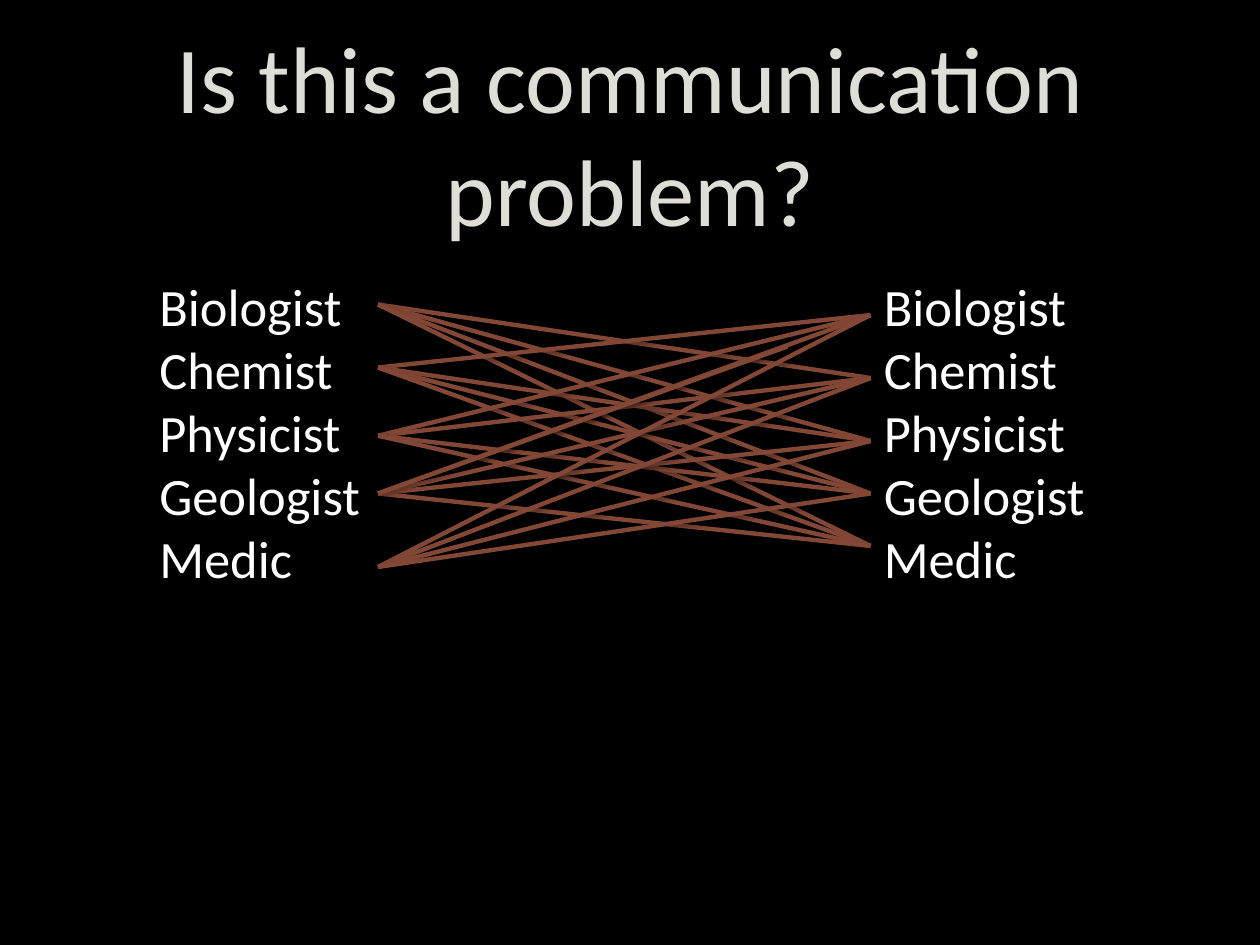
from lxml import etree
from pptx import Presentation
from pptx.dml.color import RGBColor
from pptx.enum.shapes import MSO_CONNECTOR as CONN
from pptx.enum.text import MSO_ANCHOR as ANCHOR, PP_ALIGN as ALIGN
from pptx.oxml.ns import qn
from pptx.util import Pt

FIELDS = ["Biologist", "Chemist", "Physicist", "Geologist", "Medic"]
LEFT_Y = [174, 210, 249, 282, 324]
RIGHT_Y = [180, 216, 252, 282, 312]


def rgb(value):
    return RGBColor.from_string(value)


def add_text(s, box, lines, size, color, align=ALIGN.LEFT, anchor=ANCHOR.TOP):
    tf = s.shapes.add_textbox(*map(Pt, box)).text_frame
    tf.word_wrap = True
    tf.vertical_anchor = anchor
    for i, line in enumerate(lines):
        p = tf.paragraphs[0] if i == 0 else tf.add_paragraph()
        p.alignment = align
        r = p.add_run()
        r.text = line
        for name, value in {"name": "Calibri", "size": Pt(size)}.items():
            setattr(r.font, name, value)
        r.font.color.rgb = rgb(color)


def add_shadow(line):
    effects = etree.SubElement(line._element.spPr, qn("a:effectLst"))
    shadow = etree.SubElement(effects, qn("a:outerShdw"), blurRad=str(Pt(3.1)),
                              dist=str(Pt(1.6)), dir="5400000", rotWithShape="0")
    color = etree.SubElement(shadow, qn("a:srgbClr"), val="000000")
    etree.SubElement(color, qn("a:alpha"), val="38000")


def add_link(s, x1, y1, x2, y2):
    line = s.shapes.add_connector(CONN.STRAIGHT, *map(Pt, (x1, y1, x2, y2)))
    line.line.color.rgb = rgb("834736")
    line.line.width = Pt(2.5)
    add_shadow(line)


def add_title(s, box):
    add_text(s, box, ["Is this a communication problem?"], 54, "DEDED7",
             ALIGN.CENTER, ANCHOR.BOTTOM)


def add_network(s, box):
    left, top, width, height = box
    x1, x2 = left + 132, left + 414

    # Fields on both sides
    add_text(s, (left, top, 144, height), FIELDS, 30, "FFFFFF")
    add_text(s, (x2, top, width - 414, height), FIELDS, 30, "FFFFFF")

    # Every field is linked to each of the others
    for i, y1 in enumerate(LEFT_Y):
        for j, y2 in enumerate(RIGHT_Y):
            if i != j:
                add_link(s, x1, y1, x2 - 0.5, y2)

    # Short extra link from Geologist towards Biologist
    add_link(s, x1, LEFT_Y[3], 450, 198)


def main():
    prs = Presentation()
    prs.slide_width, prs.slide_height = Pt(720), Pt(540)
    s = prs.slides.add_slide(prs.slide_layouts[6])
    s.background.fill.solid()
    s.background.fill.fore_color.rgb = rgb("000000")
    add_title(s, (54, 72, 612, 72))
    add_network(s, (84, 153, 552, 211))
    prs.save("out.pptx")


if __name__ == "__main__":
    main()
